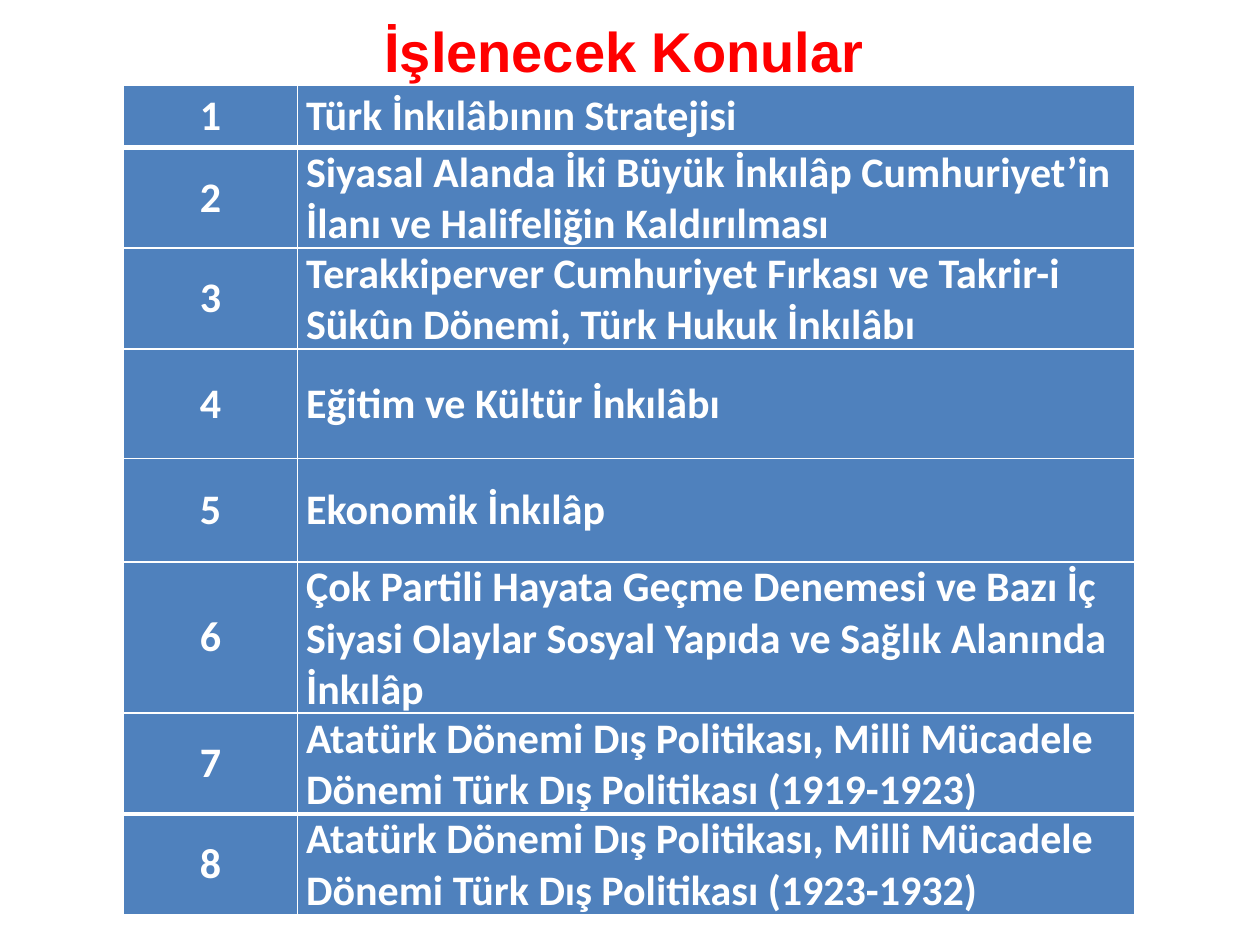
from typing import NamedTuple

import pptx
import pptx.dml.color
import pptx.enum.text
import pptx.oxml
import pptx.oxml.ns
import pptx.util

Inches = pptx.util.Inches
Pt = pptx.util.Pt
Align = pptx.enum.text.PP_ALIGN
Anchor = pptx.enum.text.MSO_ANCHOR

COLORS = {"title": "FF0000", "cell": "4F81BD", "white": "FFFFFF"}
THIN, THICK = 1, 3
COLUMN_WIDTHS = (1.38, 6.65)


class Topic(NamedTuple):
    text: str
    height: float = 0.76
    top_rule: float = THIN
    bottom_rule: float = THIN


TOPICS = (
    Topic("Türk İnkılâbının Stratejisi", 0.49, bottom_rule=THICK),
    Topic("Siyasal Alanda İki Büyük İnkılâp Cumhuriyet’in İlanı ve "
          "Halifeliğin Kaldırılması", top_rule=THICK),
    Topic("Terakkiperver Cumhuriyet Fırkası ve Takrir-i Sükûn Dönemi, "
          "Türk Hukuk İnkılâbı"),
    Topic("Eğitim ve Kültür İnkılâbı", 0.87),
    Topic("Ekonomik İnkılâp", 0.82),
    Topic("Çok Partili Hayata Geçme Denemesi ve Bazı İç Siyasi Olaylar "
          "Sosyal Yapıda ve Sağlık Alanında İnkılâp", 1.14),
    Topic("Atatürk Dönemi Dış Politikası, Milli Mücadele Dönemi Türk Dış "
          "Politikası (1919-1923)", bottom_rule=THICK),
    Topic("Atatürk Dönemi Dış Politikası, Milli Mücadele Dönemi Türk Dış "
          "Politikası (1923-1932)", top_rule=THICK),
)


def rgb(name: str) -> pptx.dml.color.RGBColor:
    return pptx.dml.color.RGBColor.from_string(COLORS[name])


def write(frame, text: str, align, font: str, size: float, color: str) -> None:
    """Put one bold run into the frame's first paragraph."""
    frame.word_wrap = True
    para = frame.paragraphs[0]
    para.alignment = align
    span = para.add_run()
    span.text = text
    span.font.name = font
    span.font.size = Pt(size)
    span.font.bold = True
    span.font.color.rgb = rgb(color)


def set_borders(cell, top: float, bottom: float) -> None:
    """Draw white rules round a cell; widths are in points."""
    properties = cell._tc.get_or_add_tcPr()
    rules = {"lnL": THIN, "lnR": THIN, "lnT": top, "lnB": bottom}
    for position, (tag, width) in enumerate(rules.items()):
        line = pptx.oxml.parse_xml(
            f'<a:{tag} {pptx.oxml.ns.nsdecls("a")} w="{Pt(width)}">'
            f'<a:solidFill><a:srgbClr val="{COLORS["white"]}"/></a:solidFill>'
            f'</a:{tag}>')
        properties.insert(position, line)


def fill_cell(cell, text: str, align, topic: Topic) -> None:
    cell.margin_left = cell.margin_right = Inches(0.07)
    cell.margin_top = cell.margin_bottom = 0
    cell.vertical_anchor = Anchor.MIDDLE
    cell.fill.solid()
    cell.fill.fore_color.rgb = rgb("cell")
    set_borders(cell, topic.top_rule, topic.bottom_rule)
    write(cell.text_frame, text, align, "Calibri", 24, "white")


def add_title(page) -> None:
    box = page.shapes.add_textbox(Inches(0.62), Inches(0.05), Inches(8.67), Inches(0.7))
    box.text_frame.vertical_anchor = Anchor.MIDDLE
    write(box.text_frame, "İşlenecek Konular", Align.CENTER, "Arial", 32, "title")


def add_topic_table(page) -> None:
    table = page.shapes.add_table(
        len(TOPICS), len(COLUMN_WIDTHS), Inches(0.98), Inches(0.68),
        Inches(sum(COLUMN_WIDTHS)), Inches(sum(topic.height for topic in TOPICS))).table
    table.horz_banding = False
    for column, width in zip(table.columns, COLUMN_WIDTHS):
        column.width = Inches(width)
    for number, (row, topic) in enumerate(zip(table.rows, TOPICS), start=1):
        row.height = Inches(topic.height)
        fill_cell(row.cells[0], str(number), Align.CENTER, topic)
        fill_cell(row.cells[1], topic.text, Align.LEFT, topic)


def main() -> None:
    deck = pptx.Presentation()
    deck.slide_width, deck.slide_height = Inches(10), Inches(7.5)
    page = deck.slides.add_slide(deck.slide_layouts[6])
    add_title(page)
    add_topic_table(page)
    deck.save("out.pptx")


if __name__ == "__main__":
    main()
